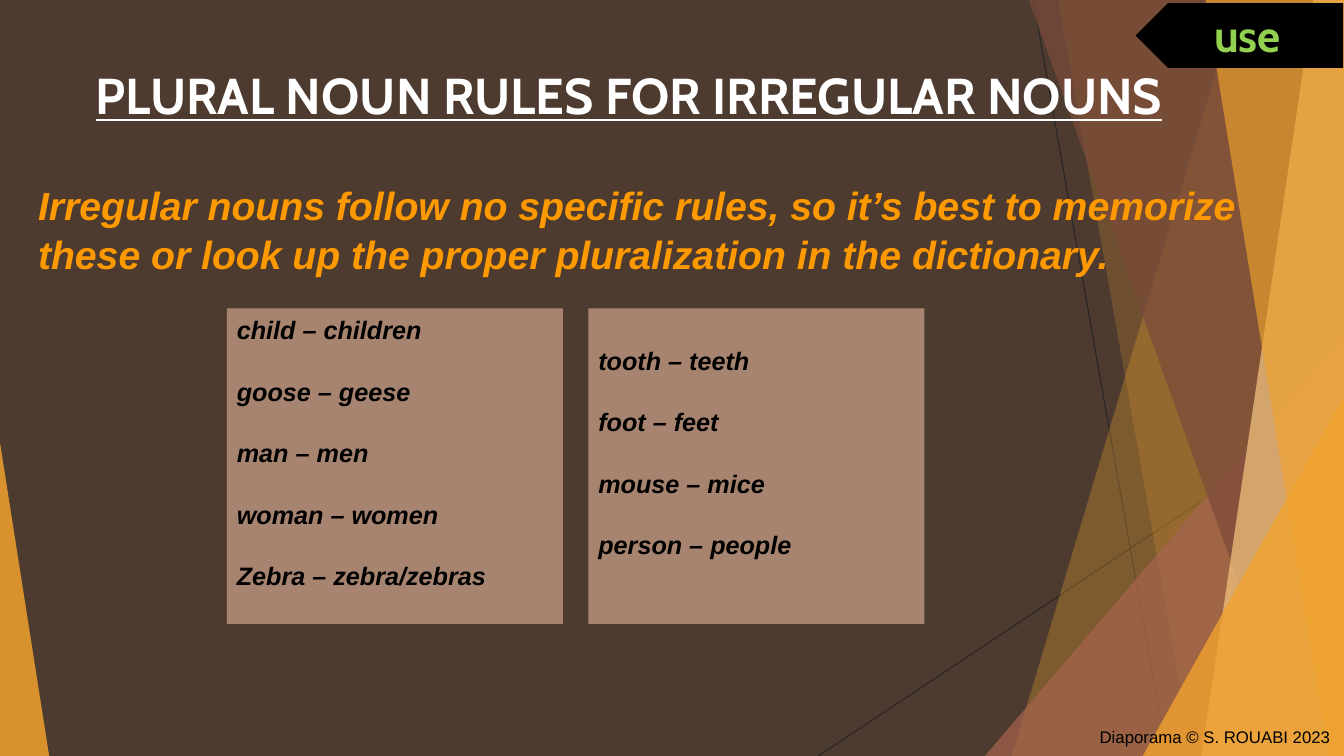
from lxml import etree
from pptx import Presentation
from pptx.dml.color import RGBColor
from pptx.enum.shapes import MSO_CONNECTOR, MSO_SHAPE
from pptx.enum.text import MSO_ANCHOR, PP_ALIGN
from pptx.oxml.ns import qn
from pptx.util import Cm, Pt

WIDTH, HEIGHT = 33.87, 19.05
COLORS = {
    "background": "4E3B30", "line": "262626", "gold": "F0A22E",
    "rust": "A5644E", "brown": "7C4B3B", "sand": "F6C782",
    "panel": "A78470", "black": "000000", "white": "FFFFFF",
    "green": "92D050", "orange": "FF9900",
}
SINGULARS = ["child – children", "goose – geese", "man – men",
             "woman – women", "Zebra – zebra/zebras"]
VOWEL_CHANGES = ["tooth – teeth", "foot – feet", "mouse – mice", "person – people"]


def rgb(name):
    return RGBColor.from_string(COLORS[name])


def paint(sp, color, opacity=100):
    sp.shadow.inherit = False
    sp.line.fill.background()
    sp.fill.solid()
    sp.fill.fore_color.rgb = rgb(color)
    if opacity < 100:
        clr = sp._element.spPr.find(qn("a:solidFill"))[0]
        etree.SubElement(clr, qn("a:alpha")).set("val", str(opacity * 1000))


def add_line(s, x1, y1, x2, y2):
    line = s.shapes.add_connector(MSO_CONNECTOR.STRAIGHT, Cm(x1), Cm(y1), Cm(x2), Cm(y2))
    line.line.color.rgb = rgb("line")
    line.line.width = Pt(0.75)
    etree.SubElement(line._element.spPr, qn("a:effectLst"))


def add_band(s, top_x, bottom_x, color, opacity):
    builder = s.shapes.build_freeform(Cm(top_x), 0)
    builder.add_line_segments([(Cm(WIDTH), 0), (Cm(WIDTH), Cm(HEIGHT)),
                               (Cm(bottom_x), Cm(HEIGHT))])
    paint(builder.convert_to_shape(), color, opacity)


def add_shape(s, kind, x, y, w, h, color, opacity=100):
    sp = s.shapes.add_shape(kind, Cm(x), Cm(y), Cm(w), Cm(h))
    paint(sp, color, opacity)
    return sp


def add_triangle(s, x, y, w, apex, color, opacity):
    sp = add_shape(s, MSO_SHAPE.ISOSCELES_TRIANGLE, x, y, w, HEIGHT - y, color, opacity)
    sp.adjustments[0] = apex


def add_textbox(s, x, y, w, h):
    return s.shapes.add_textbox(Cm(x), Cm(y), Cm(w), Cm(h))


def write(sp, lines, size, color, font="Arial", bold=True, italic=False,
          underline=False, align=PP_ALIGN.LEFT, anchor=MSO_ANCHOR.TOP,
          spacing=1.0, gap=0):
    tf = sp.text_frame
    tf.word_wrap = True
    tf.vertical_anchor = anchor
    for i, text in enumerate(lines):
        p = tf.add_paragraph() if i else tf.paragraphs[0]
        p.text = text
        p.alignment = align
        p.line_spacing = spacing
        if i:
            p.space_before = Pt(gap)
        p.font.name = font
        p.font.size = Pt(size)
        p.font.bold = bold
        p.font.italic = italic
        p.font.underline = underline
        p.font.color.rgb = rgb(color)


def add_word_panel(s, x, words, top_margin):
    sp = add_shape(s, MSO_SHAPE.RECTANGLE, x, 7.77, 8.47, 7.95, "panel")
    sp.text_frame.margin_top = Cm(top_margin)
    write(sp, words, 18, "black", italic=True, spacing=1.04, gap=21.5)


def add_backdrop(s):
    add_line(s, 26.04, 0, 29.41, HEIGHT)
    add_line(s, WIDTH, 10.24, 20.62, HEIGHT)
    add_band(s, 31.19, 25.5, "gold", 30)
    add_band(s, 26.67, 30.05, "gold", 20)
    add_triangle(s, 24.82, 8.46, 9.05, 1, "rust", 72)
    add_band(s, 25.93, 32.79, "brown", 70)
    add_band(s, 33.1, 30.28, "sand", 70)
    add_band(s, 30.38, 33.48, "gold", 65)
    add_triangle(s, 28.8, 9.98, 5.07, 1, "gold", 80)
    add_triangle(s, 0, 11.15, 1.24, 0, "gold", 85)


def main():
    prs = Presentation()
    prs.slide_width, prs.slide_height = Cm(WIDTH), Cm(HEIGHT)
    s = prs.slides.add_slide(prs.slide_layouts[6])
    s.background.fill.solid()
    s.background.fill.fore_color.rgb = rgb("background")
    add_backdrop(s)

    write(add_textbox(s, 26.95, 18.14, 6.83, 0.84), ["Diaporama © S. ROUABI 2023"],
          12, "black", bold=False, align=PP_ALIGN.RIGHT, anchor=MSO_ANCHOR.MIDDLE)
    write(add_textbox(s, 2.16, 1.5, 28.27, 1.8), ["PLURAL NOUN RULES FOR IRREGULAR NOUNS"],
          36, "white", font="Cabin", underline=True)

    tag = add_shape(s, MSO_SHAPE.PENTAGON, 28.62, 0.08, 5.23, 1.63, "black")
    tag._element.spPr.find(qn("a:xfrm")).set("flipH", "1")
    write(tag, ["use"], 32, "green", font="Cabin", align=PP_ALIGN.CENTER)

    write(add_textbox(s, 0.71, 4.39, 31.17, 5.05),
          ["Irregular nouns follow no specific rules, so it’s best to memorize "
           "these or look up the proper pluralization in the dictionary."],
          28, "orange", italic=True, spacing=1.04)
    add_word_panel(s, 5.72, SINGULARS, 0.13)
    add_word_panel(s, 14.83, VOWEL_CHANGES, 0.89)
    prs.save("out.pptx")


if __name__ == "__main__":
    main()
